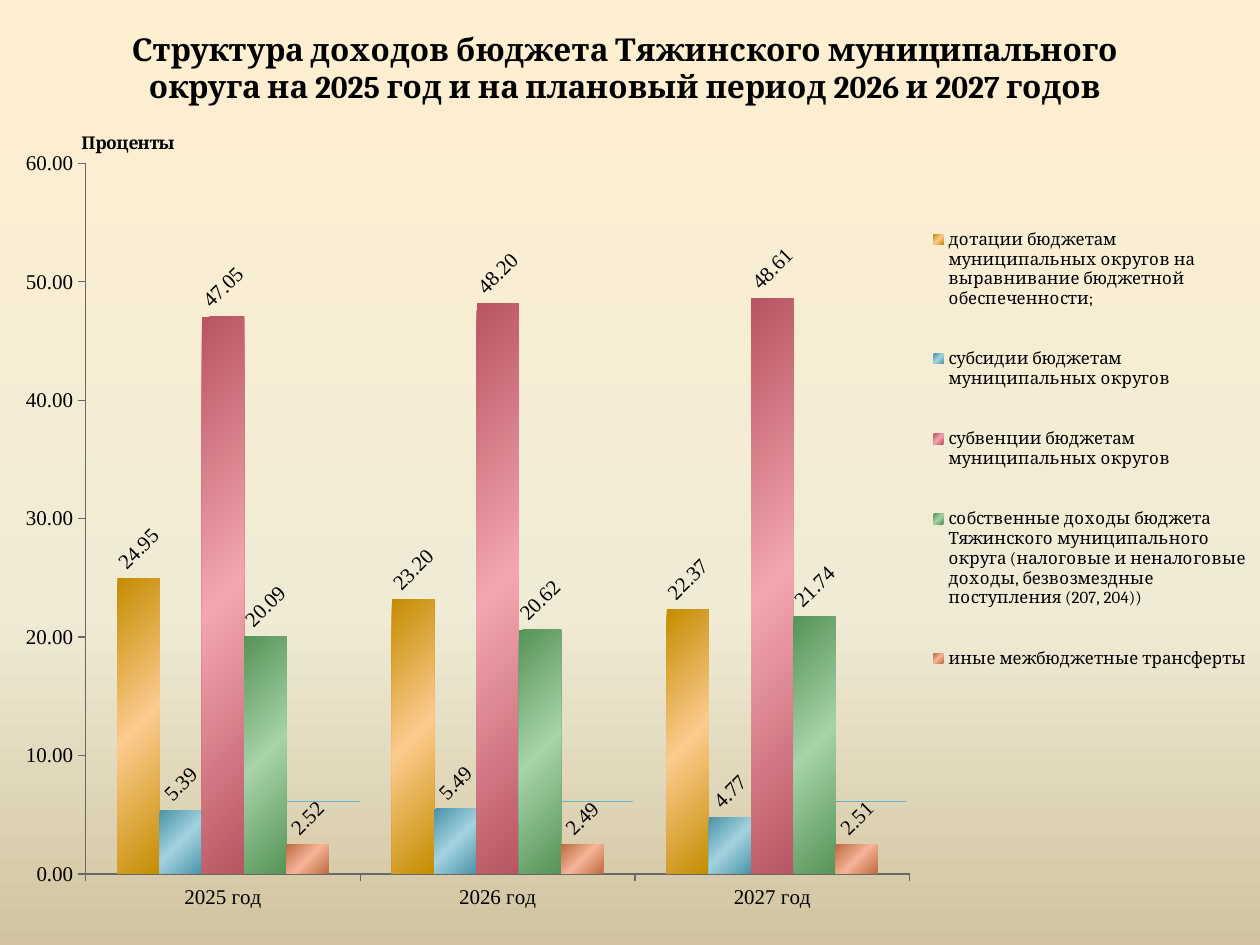
import pptx
import pptx.chart.data
import pptx.dml.color
import pptx.enum.chart
import pptx.oxml
import pptx.oxml.ns
import pptx.util

Pt = pptx.util.Pt
RGBColor = pptx.dml.color.RGBColor
qn = pptx.oxml.ns.qn
chart_enum = pptx.enum.chart

BLACK = RGBColor(0x00, 0x00, 0x00)
AXIS_GREY = RGBColor(0x68, 0x68, 0x68)
SKY = RGBColor(0x60, 0xB5, 0xCC)
CREAM = RGBColor(0xFF, 0xEF, 0xD1)
IVORY = RGBColor(0xF0, 0xEB, 0xD5)
SAND = RGBColor(0xD1, 0xC3, 0x9F)
GOLD_DARK, GOLD_LIGHT = RGBColor(0xC4, 0x8C, 0x00), RGBColor(0xFC, 0xCB, 0x8E)
BLUE_DARK, BLUE_LIGHT = RGBColor(0x4A, 0x93, 0xA8), RGBColor(0xA4, 0xD3, 0xE0)
ROSE_DARK, ROSE_LIGHT = RGBColor(0xB8, 0x55, 0x62), RGBColor(0xF3, 0xA6, 0xAF)
GREEN_DARK, GREEN_LIGHT = RGBColor(0x55, 0x94, 0x57), RGBColor(0xA6, 0xD3, 0xA8)
RUST_DARK, RUST_LIGHT = RGBColor(0xBC, 0x6B, 0x40), RGBColor(0xF6, 0xB4, 0x98)

YEARS = ["2025 год", "2026 год", "2027 год"]
INCOME = [
    ("дотации бюджетам муниципальных округов на выравнивание бюджетной обеспеченности;",
     (24.95, 23.20, 22.37), GOLD_DARK, GOLD_LIGHT),
    ("субсидии бюджетам муниципальных округов",
     (5.39, 5.49, 4.77), BLUE_DARK, BLUE_LIGHT),
    ("субвенции бюджетам муниципальных округов",
     (47.05, 48.20, 48.61), ROSE_DARK, ROSE_LIGHT),
    ("собственные доходы бюджета Тяжинского муниципального округа (налоговые "
     "и неналоговые доходы, безвозмездные поступления (207, 204))",
     (20.09, 20.62, 21.74), GREEN_DARK, GREEN_LIGHT),
    ("иные межбюджетные трансферты",
     (2.52, 2.49, 2.51), RUST_DARK, RUST_LIGHT),
]


def set_gradient(owner, stops, angle):
    """Replace the stops and angle of the gradient fill inside owner."""
    gradient = owner.find(".//" + qn("a:gradFill"))
    stop_xml = "".join(
        f'<a:gs pos="{percent * 1000}"><a:srgbClr val="{color}"/></a:gs>'
        for percent, color in stops)
    fresh = pptx.oxml.parse_xml(
        f'<a:gradFill {pptx.oxml.ns.nsdecls("a")} rotWithShape="1">'
        f'<a:gsLst>{stop_xml}</a:gsLst>'
        f'<a:lin ang="{angle * 60000}" scaled="0"/></a:gradFill>')
    gradient.getparent().replace(gradient, fresh)


def place(element, index, **fractions):
    """Give a chart part a manual layout in fractions of the chart."""
    for old in element.findall(qn("c:layout")):
        element.remove(old)
    target = '<c:layoutTarget val="inner"/>' if index == 0 else ""
    modes = '<c:xMode val="edge"/><c:yMode val="edge"/>'
    values = "".join(f'<c:{key} val="{value}"/>' for key, value in fractions.items())
    element.insert(index, pptx.oxml.parse_xml(
        f'<c:layout {pptx.oxml.ns.nsdecls("c")}><c:manualLayout>'
        f'{target}{modes}{values}</c:manualLayout></c:layout>'))


deck = pptx.Presentation()
deck.slide_width, deck.slide_height = Pt(720), Pt(540)
page = deck.slides.add_slide(deck.slide_layouts[6])

# Background
page.background.fill.gradient()
set_gradient(page.element, [(0, CREAM), (65, IVORY), (100, SAND)], 90)

# Zero-value chart behind: only thin lines show
zero_data = pptx.chart.data.CategoryChartData(number_format="0.0")
zero_data.categories = ["1", "2", "3"]
zero_data.add_series("Series 1", (0, 0, 0))
zero_chart = page.shapes.add_chart(
    chart_enum.XL_CHART_TYPE.COLUMN_CLUSTERED,
    Pt(-14.4), Pt(9.36), Pt(792.72), Pt(515.52), zero_data).chart
zero_chart.has_title = False
zero_chart.has_legend = False
zero_chart.font.name, zero_chart.font.size = "Cambria", Pt(10)
zero_chart.font.color.rgb = BLACK
zero_chart.value_axis.has_major_gridlines = False
zero_chart.value_axis.minimum_scale = 0
zero_chart.value_axis.visible = False
zero_chart.category_axis.visible = False
zero_plot = zero_chart.plots[0]
zero_plot.gap_width, zero_plot.vary_by_categories = 150, False
zero_format = zero_plot.series[0].format
zero_format.fill.solid()
zero_format.fill.fore_color.rgb = SKY
zero_format.line.color.rgb = SKY
zero_format.line.width = Pt(0.5)
place(zero_chart.element.find(".//" + qn("c:plotArea")), 0,
      x=0.14, y=0.17, w=0.59, h=0.7)

# Income chart
income_data = pptx.chart.data.CategoryChartData(number_format="#,##0.00")
income_data.categories = YEARS
for name, values, dark, light in INCOME:
    income_data.add_series(name, values)
chart = page.shapes.add_chart(
    chart_enum.XL_CHART_TYPE.COLUMN_CLUSTERED,
    Pt(0), Pt(0), Pt(720), Pt(540), income_data).chart
chart.font.name, chart.font.size = "Cambria", Pt(10)
chart.font.color.rgb = BLACK
place(chart.element.find(".//" + qn("c:plotArea")), 0,
      x=0.068, y=0.173, w=0.654, h=0.752)

# Columns and their slanted labels
plot = chart.plots[0]
plot.gap_width, plot.overlap, plot.vary_by_categories = 150, 0, False
for series, (name, values, dark, light) in zip(plot.series, INCOME):
    series.format.fill.gradient()
    set_gradient(series._element, [(0, dark), (50, light), (100, dark)], 45)
    labels = series.data_labels
    labels.font.name, labels.font.size = "Times New Roman", Pt(12)
    labels.font.color.rgb = BLACK
    labels.number_format, labels.number_format_is_linked = "#,##0.00", False
    labels.position = chart_enum.XL_LABEL_POSITION.OUTSIDE_END
    labels.show_value = True
    labels._element.find(".//" + qn("a:bodyPr")).set("rot", "-2700000")

# Axes
for axis in (chart.category_axis, chart.value_axis):
    axis.has_major_gridlines = False
    axis.major_tick_mark = chart_enum.XL_TICK_MARK.OUTSIDE
    axis.minor_tick_mark = chart_enum.XL_TICK_MARK.NONE
    axis.format.line.color.rgb = AXIS_GREY
    axis.format.line.width = Pt(0.75)
    axis.tick_labels.font.name = "Times New Roman"
    axis.tick_labels.font.size = Pt(12)
    axis.tick_labels.font.color.rgb = BLACK
value_axis = chart.value_axis
value_axis.minimum_scale, value_axis.maximum_scale, value_axis.major_unit = 0, 60, 10
value_axis.tick_labels.number_format = "#,##0.00"
value_axis.tick_labels.number_format_is_linked = False

# Chart title and value axis title
chart.has_title = True
value_axis.has_title = True
for title, text, size, left, top in [
    (chart.chart_title, "Структура доходов бюджета Тяжинского муниципального "
     "округа на 2025 год и на плановый период 2026 и 2027 годов", 18, 0.1, 0.025),
    (value_axis.axis_title, "Проценты", 10, 0.062, 0.136),
]:
    title.text_frame.text = text
    para = title.text_frame.paragraphs[0]
    para.font.name, para.font.size, para.font.bold = "Cambria", Pt(size), True
    para.font.color.rgb = BLACK
    body = title.element.find(".//" + qn("a:bodyPr"))
    body.set("rot", "0")
    body.set("vert", "horz")
    place(title.element, 1, x=left, y=top)

# Legend
chart.has_legend = True
legend = chart.legend
legend.position = chart_enum.XL_LEGEND_POSITION.RIGHT
legend.include_in_layout = False
legend.font.name, legend.font.size = "Cambria", Pt(9.6)
legend.font.color.rgb = BLACK
place(legend._element, 1, x=0.735, y=0.2, w=0.26, h=0.55)

deck.save("out.pptx")
